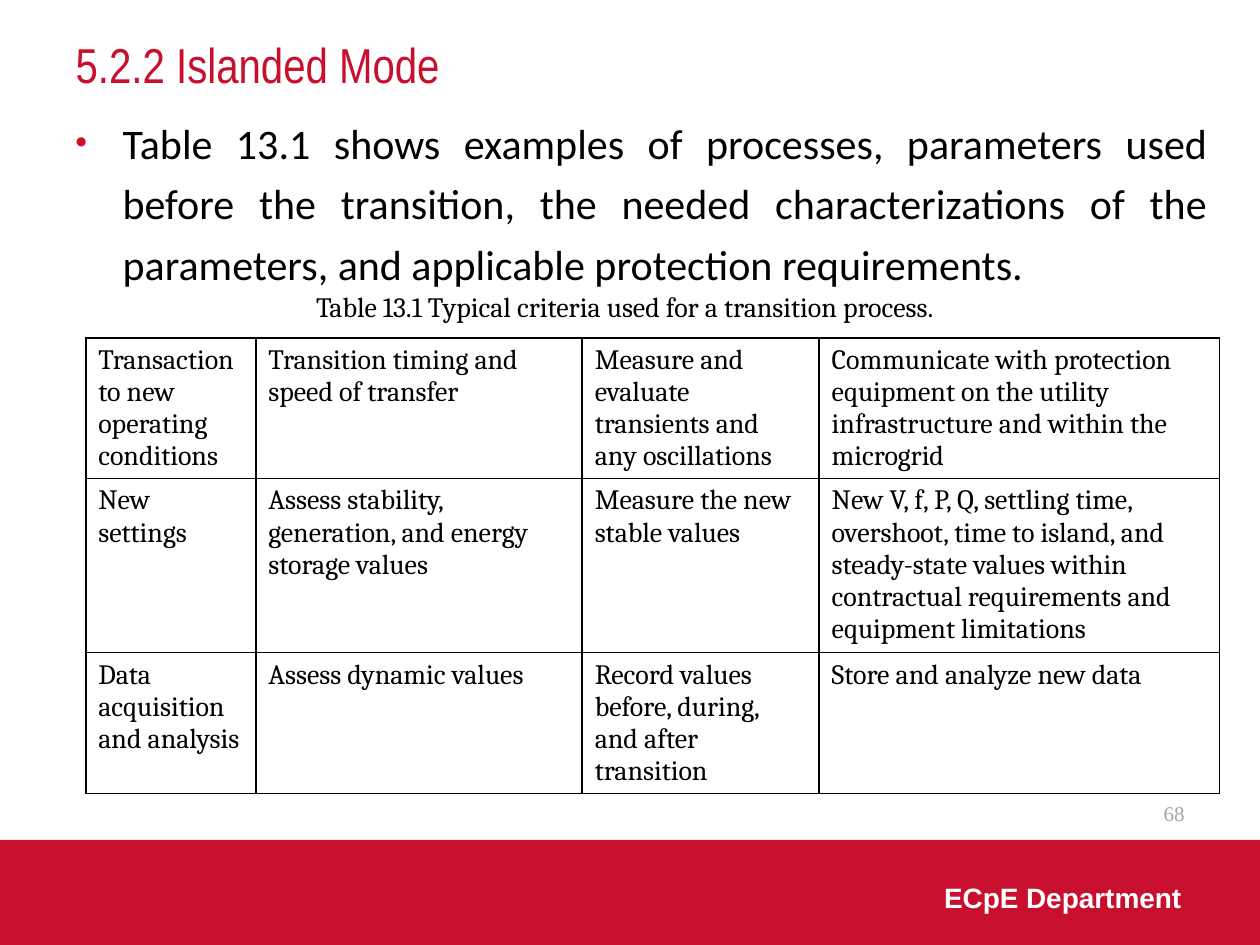
"""Build the islanded mode slide with its table of transition criteria."""
from dataclasses import dataclass

import pptx
import pptx.dml.color
import pptx.enum.shapes
import pptx.enum.text
import pptx.oxml
import pptx.oxml.ns
import pptx.util

Pt = pptx.util.Pt
Align = pptx.enum.text.PP_ALIGN
Anchor = pptx.enum.text.MSO_ANCHOR


@dataclass(frozen=True)
class Theme:
    red: str = "C8102E"
    dot: str = "CE1126"
    black: str = "000000"
    white: str = "FFFFFF"
    gray: str = "ACA39A"
    title: int = 28
    body: int = 24
    cell: int = 16
    page: int = 12


@dataclass(frozen=True)
class Box:
    left: float
    top: float
    width: float
    height: float

    def rect(self) -> tuple:
        return tuple(Pt(n) for n in (self.left, self.top, self.width, self.height))


@dataclass(frozen=True)
class Label:
    box: Box
    text: str
    style: dict


@dataclass(frozen=True)
class Row:
    height: float
    cells: tuple


THEME = Theme()
WIDE, TALL = 720, 540
COLS = (97.2, 186.5, 135.4, 228.9)
ROWS = (
    Row(78, (
        "Transaction to new operating conditions",
        "Transition timing and speed of transfer",
        "Measure and evaluate transients and any oscillations",
        "Communicate with protection equipment on the utility infrastructure "
        "and within the microgrid",
    )),
    Row(95, (
        "New settings",
        "Assess stability, generation, and energy storage values",
        "Measure the new stable values",
        "New V, f, P, Q, settling time, overshoot, time to island, and\n"
        "steady-state values within contractual requirements and equipment limitations",
    )),
    Row(78, (
        "Data acquisition and analysis",
        "Assess dynamic values",
        "Record values\nbefore, during, and after transition",
        "Store and analyze new data",
    )),
)
GRID = Box(49, 193, sum(COLS), sum(row.height for row in ROWS))
LABELS = (
    Label(Box(516, 450, 168, 29), "68", dict(
        font="Times New Roman", size=THEME.page, color=THEME.gray,
        align=Align.RIGHT, anchor=Anchor.MIDDLE)),
    Label(Box(530.6, 498, 153.4, 29), "ECpE Department", dict(
        font="Arial", size=THEME.cell, color=THEME.white, bold=True,
        align=Align.CENTER, anchor=Anchor.MIDDLE)),
    Label(Box(173.5, 162, 386, 27), "Table 13.1 Typical criteria used for a transition process.",
          dict(font="Cambria", size=THEME.cell)),
)


def tint(code: str) -> pptx.dml.color.RGBColor:
    return pptx.dml.color.RGBColor.from_string(code)


def node(xml: str):
    return pptx.oxml.parse_xml(xml.replace(" ", f" {pptx.oxml.ns.nsdecls('a')} ", 1))


def write(frame, text: str, *, font: str, size: float, color: str = THEME.black,
          bold: bool = False, align=Align.LEFT, anchor=Anchor.TOP, space: float = 1) -> None:
    frame.word_wrap = True
    frame.vertical_anchor = anchor
    for i, line in enumerate(text.split("\n")):
        para = frame.add_paragraph() if i else frame.paragraphs[0]
        para.alignment = align
        para.line_spacing = space
        run = para.add_run()
        run.text = line
        run.font.name = font
        run.font.size = Pt(size)
        run.font.bold = bold
        run.font.color.rgb = tint(color)


def label(slide, item: Label):
    shape = slide.shapes.add_textbox(*item.box.rect())
    write(shape.text_frame, item.text, **item.style)
    return shape


def bullet(para, indent: float) -> None:
    props = para._p.get_or_add_pPr()
    props.set("marL", str(Pt(indent)))
    props.set("indent", str(-Pt(indent)))
    for xml in (
        f'<a:buClr ><a:srgbClr val="{THEME.dot}"/></a:buClr>',
        '<a:buSzPct val="80000"/>',
        '<a:buFont typeface="Arial"/>',
        '<a:buChar char="•"/>',
    ):
        props.append(node(xml))


def border(cell) -> None:
    props = cell._tc.get_or_add_tcPr()
    for side in "LRTB":
        props.append(node(
            f'<a:ln{side} w="{Pt(1)}"><a:solidFill><a:srgbClr val="{THEME.black}"/>'
            f'</a:solidFill></a:ln{side}>'))


def grid(slide) -> None:
    table = slide.shapes.add_table(len(ROWS), len(COLS), *GRID.rect()).table
    table.first_row = table.horz_banding = False
    for col, width in zip(table.columns, COLS):
        col.width = Pt(width)
    for line, row in zip(table.rows, ROWS):
        line.height = Pt(row.height)
        for cell, text in zip(line.cells, row.cells):
            border(cell)
            cell.margin_bottom = Pt(0)
            cell.fill.solid()
            cell.fill.fore_color.rgb = tint(THEME.white)
            write(cell.text_frame, text, font="Cambria", size=THEME.cell)


def band(slide, box: Box) -> None:
    shape = slide.shapes.add_shape(pptx.enum.shapes.MSO_SHAPE.RECTANGLE, *box.rect())
    shape.shadow.inherit = False
    shape.fill.solid()
    shape.fill.fore_color.rgb = tint(THEME.red)
    shape.line.fill.background()


def main() -> None:
    deck = pptx.Presentation()
    deck.slide_width, deck.slide_height = Pt(WIDE), Pt(TALL)
    slide = deck.slides.add_slide(deck.slide_layouts[5])
    band(slide, Box(0, 480, WIDE, 60))
    title = slide.shapes.title
    title.left, title.top, title.width, title.height = Box(36, 12, 648, 49).rect()
    title.text_frame.auto_size = pptx.enum.text.MSO_AUTO_SIZE.NONE
    write(title.text_frame, "5.2.2 Islanded Mode", font="Arial Narrow", size=THEME.title,
          color=THEME.red, anchor=Anchor.MIDDLE)
    body = label(slide, Label(
        Box(36, 57.6, 661, 110),
        "Table 13.1 shows examples of processes, parameters used before the transition, "
        "the needed characterizations of the parameters, and applicable protection requirements.",
        dict(font="Calibri", size=THEME.body, align=Align.JUSTIFY, space=1.2)))
    bullet(body.text_frame.paragraphs[0], 27)
    grid(slide)
    for item in LABELS:
        label(slide, item)
    deck.save("out.pptx")


if __name__ == "__main__":
    main()
